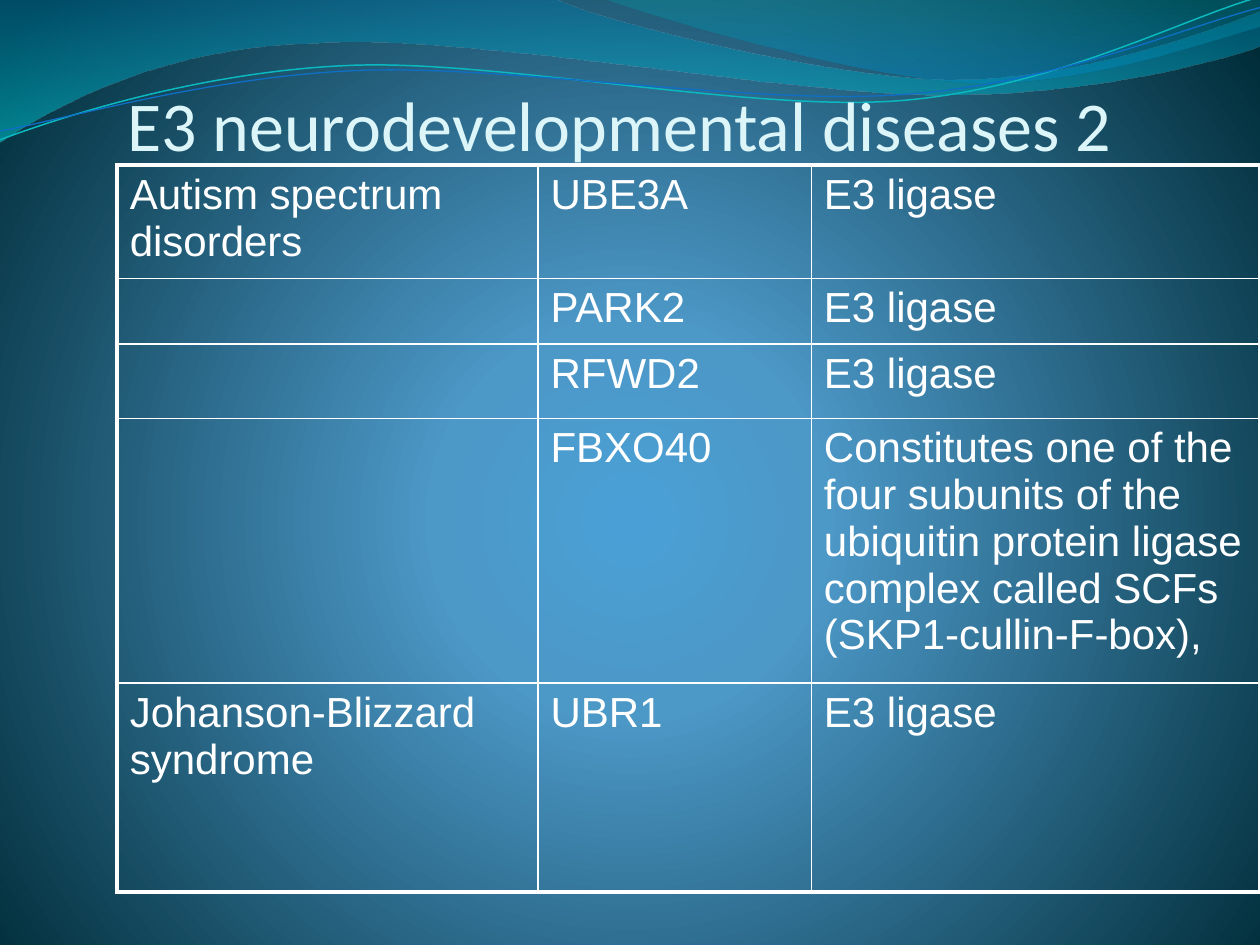
from math import cos, radians, sin

from pptx import Presentation
from pptx.dml.color import RGBColor
from pptx.enum.text import MSO_ANCHOR
from pptx.oxml import parse_xml
from pptx.oxml.ns import nsdecls, qn
from pptx.util import Inches, Pt

COLORS = {"white": "FFFFFF", "title": "DBF5F9",
          "bg_center": "4AA0D6", "bg_mid": "4C98C7", "bg_edge": "002C38",
          "wave_blue": "0074A1", "wave_cyan": "00C6CF",
          "crest_teal": "00A1A9", "crest_blue": "008BBF",
          "line_cyan": "0AB8BF", "line_blue": "0F6FC6"}

DOWNWARD = '<a:lin ang="5400000" scaled="1"/>'
RADIAL = ('<a:path path="circle"><a:fillToRect l="10000" t="110000" '
          'r="10000" b="100000"/></a:path>')
TILT = -2.7

# Each wave: box, start point, then cubic curves or straight steps, in inches
BAND = ((-0.01, -0.01, 10.02, 1.14), (0, 0), [
    (4.4, -0.01), (4.76, 0.17, 6.64, 0.63, 7.58, 0.63),
    (8.53, 0.63, 9.58, 0.26, 10, 0.09), (10.01, 0.36),
    (9.83, 0.44, 8.7, 0.76, 7.46, 0.75), (6.22, 0.75, 3.82, 0.28, 2.57, 0.34),
    (1.29, 0.36, 0.46, 0.83, -0.01, 1.13), (0, 0)])
CREST = ((4.79, -0.01, 5.21, 0.7), (4.79, -0.01), [
    (5.09, 0.11, 6.82, 0.62, 7.69, 0.65), (8.56, 0.69, 9.61, 0.32, 10, 0.21),
    (10, 0), (4.79, -0.01)])
CYAN_LINE = ((-0.02, 0.22, 10.02, 0.71), (0, 1.11), [
    (0.48, 0.93, 1.58, 0.57, 2.77, 0.52), (3.95, 0.47, 5.93, 0.89, 7.13, 0.8),
    (8.33, 0.71, 9.38, 0.15, 9.98, -0.02)])
BLUE_LINE = ((-0.02, 0.3, 10.03, 0.58), (0, 1.04), [
    (0.47, 0.96, 1.64, 0.61, 2.83, 0.56), (4.03, 0.51, 5.97, 0.84, 7.17, 0.75),
    (8.36, 0.67, 9.41, 0.21, 10, 0.06)])

COL_WIDTHS = [3.34, 2.17, 3.56]
ROW_HEIGHTS = [0.88, 0.52, 0.59, 0.82, 1.66]
ROWS = [
    ("Autism spectrum disorders", "UBE3A", "E3 ligase"),
    ("", "PARK2", "E3 ligase"),
    ("", "RFWD2", "E3 ligase"),
    ("", "FBXO40", "Constitutes one of the four subunits of the ubiquitin "
                   "protein ligase complex called SCFs (SKP1-cullin-F-box),"),
    ("Johanson-Blizzard syndrome", "UBR1", "E3 ligase"),
]


def rgb(name):
    return RGBColor.from_string(COLORS[name])


def set_gradient(fill, element, stops, direction):
    """Swap the solid fill inside element for stops of (percent, colour, opacity)."""
    fill.solid()
    solid = next(element.iter(qn("a:solidFill")))
    gs = "".join(
        f'<a:gs pos="{pos * 1000}"><a:srgbClr val="{COLORS[color]}">'
        f'<a:alpha val="{opacity * 1000}"/></a:srgbClr></a:gs>'
        for pos, color, opacity in stops)
    solid.getparent().replace(solid, parse_xml(
        f'<a:gradFill {nsdecls("a")} rotWithShape="1"><a:gsLst>{gs}</a:gsLst>'
        f'{direction}</a:gradFill>'))


def add_wave(slide, wave, closed, tilt=0):
    """Freeform of true curves; tilt turns the shape about its box centre."""
    (x, y, w, h), start, steps = wave
    turn = radians(-tilt)

    def points(numbers):
        xml = ""
        for px, py in zip(numbers[::2], numbers[1::2]):
            dx, dy = px - x - w / 2, py - y - h / 2
            lx = Inches(w / 2 + dx * cos(turn) - dy * sin(turn))
            ly = Inches(h / 2 + dx * sin(turn) + dy * cos(turn))
            xml += f'<a:pt x="{lx}" y="{ly}"/>'
        return xml

    # The box corners fix place and size, then the curves take over
    left, top, right, bottom = (Inches(v) for v in (x, y, x + w, y + h))
    builder = slide.shapes.build_freeform(left, top, scale=1.0)
    builder.add_line_segments([(right, top), (right, bottom), (left, bottom)])
    sp = builder.convert_to_shape()
    sp.shadow.inherit = False
    sp.rotation = tilt
    outline = f"<a:moveTo>{points(start)}</a:moveTo>"
    for step in steps:
        tag = "lnTo" if len(step) == 2 else "cubicBezTo"
        outline += f"<a:{tag}>{points(step)}</a:{tag}>"
    if closed:
        outline += "<a:close/>"
    path_list = next(sp.element.iter(qn("a:pathLst")))
    path_list.getparent().replace(path_list, parse_xml(
        f'<a:pathLst {nsdecls("a")}><a:path w="{Inches(w)}" h="{Inches(h)}">'
        f'{outline}</a:path></a:pathLst>'))
    return sp


def add_waves(slide):
    # Filled bands
    for wave, stops in (
            (BAND, [(0, "wave_blue", 45), (100, "wave_cyan", 55)]),
            (CREST, [(0, "crest_teal", 30), (80, "crest_blue", 45)])):
        sp = add_wave(slide, wave, True)
        set_gradient(sp.fill, sp.element.spPr, stops, DOWNWARD)
        sp.line.fill.background()
    # Thin lines
    for wave, color, width in ((CYAN_LINE, "line_cyan", 0.85),
                               (BLUE_LINE, "line_blue", 0.75)):
        sp = add_wave(slide, wave, False, TILT)
        sp.fill.background()
        sp.line.color.rgb = rgb(color)
        sp.line.width = Pt(width)


def style_text(p, size, font, color):
    p.font.size = Pt(size)
    p.font.name = font
    p.font.color.rgb = rgb(color)


def add_title(slide, left, top, width, height):
    tf = slide.shapes.add_textbox(left, top, width, height).text_frame
    tf.word_wrap = True
    tf.vertical_anchor = MSO_ANCHOR.BOTTOM
    tf.margin_left = tf.margin_right = tf.margin_bottom = 0
    tf.margin_top = Inches(0.05)
    p = tf.paragraphs[0]
    p.text = "E3 neurodevelopmental diseases 2"
    style_text(p, 40, "Calibri", "title")


def set_borders(cell, widths):
    tcPr = cell._tc.get_or_add_tcPr()
    for i, (side, width) in enumerate(widths.items()):
        tcPr.insert(i, parse_xml(
            f'<a:ln{side} {nsdecls("a")} w="{Pt(width)}"><a:solidFill>'
            f'<a:srgbClr val="{COLORS["white"]}"/></a:solidFill></a:ln{side}>'))


def add_disease_table(slide, left, top, width, height):
    last_row, last_col = len(ROWS) - 1, len(COL_WIDTHS) - 1
    frame = slide.shapes.add_table(
        len(ROWS), len(COL_WIDTHS), left, top, width, height)
    table = frame.table
    table.first_row = table.horz_banding = False
    for col, w in zip(table.columns, COL_WIDTHS):
        col.width = Inches(w)
    for row, h in zip(table.rows, ROW_HEIGHTS):
        row.height = Inches(h)
    frame.height = height
    for r, texts in enumerate(ROWS):
        for c, text in enumerate(texts):
            cell = table.cell(r, c)
            cell.fill.background()
            p = cell.text_frame.paragraphs[0]
            p.text = text
            style_text(p, 24, "Arial", "white")
            # Heavy outer frame, thin inner lines
            outer = {"L": c == 0, "R": c == last_col,
                     "T": r == 0, "B": r == last_row}
            set_borders(cell, {k: 2.25 if v else 1 for k, v in outer.items()})


def main():
    prs = Presentation()
    prs.slide_width, prs.slide_height = Inches(10), Inches(7.5)
    slide = prs.slides.add_slide(prs.slide_layouts[6])
    set_gradient(slide.background.fill, slide.element,
                 [(0, "bg_center", 100), (25, "bg_mid", 100),
                  (100, "bg_edge", 100)], RADIAL)
    add_waves(slide)
    add_title(slide, Inches(1.01), Inches(0.21), Inches(8.99), Inches(1.1))
    add_disease_table(slide, Inches(0.93), Inches(1.31), Inches(9.07), Inches(5.77))
    prs.save("out.pptx")


if __name__ == "__main__":
    main()
